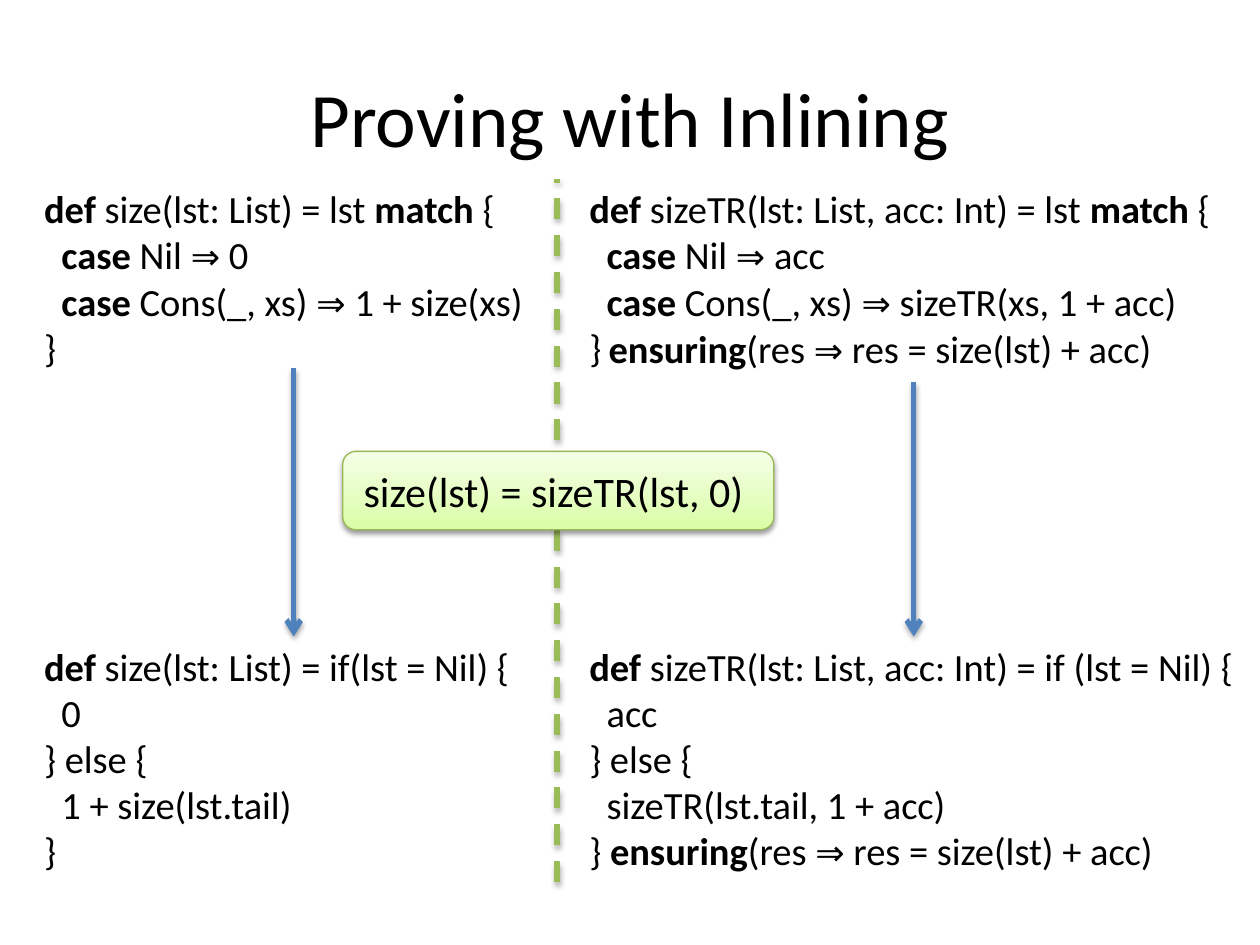
import pptx
import pptx.util
import pptx.dml.color
import pptx.enum.dml
import pptx.enum.shapes
import pptx.enum.text
import pptx.oxml
import pptx.oxml.ns

Cm = pptx.util.Cm
Pt = pptx.util.Pt

FONT = "Calibri"
COLORS = {
    "text": "000000",
    "divider": "9BBB59",
    "arrow": "4F81BD",
    "box_line": "98B955",
    "box_bottom": "DAFDA7",
    "box_top": "F5FFE7",
}
TITLE = "Proving with Inlining"
CLAIM = "size(lst) = sizeTR(lst, 0)"
LEFT, RIGHT = 0.64, 11.63
TOP, BOTTOM = 3.61, 12.83
LEFT_W, RIGHT_W = 10.59, 13.56
DIVIDER_X, DIVIDER_END = 11.23, 17.78
INDENT = 0.35

CODE = [
    (LEFT, TOP, LEFT_W, 4.11, [
        "*def* size(lst: List) = lst *match* {",
        "  *case* Nil ⇒ 0",
        "  *case* Cons(_, xs) ⇒ 1 + size(xs)",
        "}",
    ]),
    (RIGHT, TOP, RIGHT_W, 4.11, [
        "*def* sizeTR(lst: List, acc: Int) = lst *match* {",
        "  *case* Nil ⇒ acc",
        "  *case* Cons(_, xs) ⇒ sizeTR(xs, 1 + acc)",
        "}",
    ]),
    (LEFT, BOTTOM, LEFT_W, 4.95, [
        "*def* size(lst: List) = if(lst = Nil) {",
        "  0",
        "} else {",
        "  1 + size(lst.tail)",
        "}",
    ]),
    (RIGHT, BOTTOM, RIGHT_W, 4.95, [
        "*def* sizeTR(lst: List, acc: Int) = if (lst = Nil) {",
        "  acc",
        "} else {",
        "  sizeTR(lst.tail, 1 + acc)",
        "} *ensuring*(res ⇒ res = size(lst) + acc)",
    ]),
    (12.02, 6.43, 13.06, 1.19, ["*ensuring*(res ⇒ res = size(lst) + acc)"]),
]
ARROWS = [(5.92, 7.42), (18.42, 7.7)]


def rgb(name):
    return pptx.dml.color.RGBColor.from_string(COLORS[name])


def style(r, size, bold=False):
    r.font.name = FONT
    r.font.size = Pt(size)
    r.font.bold = bold
    r.font.color.rgb = rgb("text")


def add_run(p, text, size, bold=False):
    r = p.add_run()
    r.text = text
    style(r, size, bold)


def add_code(s, x, y, w, h, lines):
    tf = s.shapes.add_textbox(Cm(x), Cm(y), Cm(w), Cm(h)).text_frame
    tf.word_wrap = True
    tf.auto_size = pptx.enum.text.MSO_AUTO_SIZE.SHAPE_TO_FIT_TEXT
    for i, line in enumerate(lines):
        p = tf.add_paragraph() if i else tf.paragraphs[0]
        if line.startswith(" "):
            p._p.get_or_add_pPr().set("marL", str(Cm(INDENT)))
        for j, part in enumerate(line.strip().split("*")):
            before, symbol, after = part.partition("⇒")
            for text, size in ((before, 22), (symbol, 20), (after, 22)):
                if text:
                    add_run(p, text, size, j % 2 == 1)


def add_shadow(shape, dist, alpha):
    effects = pptx.oxml.parse_xml(
        f'<a:effectLst {pptx.oxml.ns.nsdecls("a")}>'
        f'<a:outerShdw blurRad="{Pt(3.1)}" dist="{Pt(dist)}" dir="5400000" rotWithShape="0">'
        f'<a:srgbClr val="000000"><a:alpha val="{alpha * 1000}"/></a:srgbClr>'
        '</a:outerShdw></a:effectLst>')
    shape._element.spPr.append(effects)


def add_line(s, x, y1, y2, color):
    line = s.shapes.add_connector(
        pptx.enum.shapes.MSO_CONNECTOR.STRAIGHT, Cm(x), Cm(y1), Cm(x), Cm(y2))
    line.line.color.rgb = rgb(color)
    line.line.width = Pt(3)
    add_shadow(line, 1.8, 35)
    return line


def add_claim(s):
    sp = s.shapes.add_shape(
        pptx.enum.shapes.MSO_SHAPE.ROUNDED_RECTANGLE, Cm(6.91), Cm(9.1), Cm(8.69), Cm(1.58))
    sp.fill.gradient()
    sp.fill.gradient_angle = 90
    for stop, name in zip(sp.fill.gradient_stops, ("box_bottom", "box_top")):
        stop.color.rgb = rgb(name)
    sp.line.color.rgb = rgb("box_line")
    sp.line.width = Pt(0.75)
    add_shadow(sp, 1.6, 38)
    tf = sp.text_frame
    tf.vertical_anchor = pptx.enum.text.MSO_ANCHOR.MIDDLE
    p = tf.paragraphs[0]
    p.alignment = pptx.enum.text.PP_ALIGN.CENTER
    add_run(p, CLAIM + " ", 24)


def main():
    prs = pptx.Presentation()
    prs.slide_width, prs.slide_height = Cm(25.4), Cm(19.05)
    s = prs.slides.add_slide(prs.slide_layouts[5])

    title = s.shapes.title
    title.left, title.top, title.width, title.height = Cm(1.27), Cm(0.76), Cm(22.86), Cm(3.18)
    title.text_frame.text = TITLE
    title.text_frame.vertical_anchor = pptx.enum.text.MSO_ANCHOR.MIDDLE
    p = title.text_frame.paragraphs[0]
    p.alignment = pptx.enum.text.PP_ALIGN.CENTER
    style(p.runs[0], 44)

    divider = add_line(s, DIVIDER_X, DIVIDER_END, TOP, "divider")
    divider.line.dash_style = pptx.enum.dml.MSO_LINE.DASH
    for block in CODE:
        add_code(s, *block)
    for x, y in ARROWS:
        arrow = add_line(s, x, y, BOTTOM, "arrow")
        arrow.line._get_or_add_ln().append(pptx.oxml.parse_xml(
            f'<a:tailEnd {pptx.oxml.ns.nsdecls("a")} type="arrow"/>'))
    add_claim(s)
    prs.save("out.pptx")


if __name__ == "__main__":
    main()
